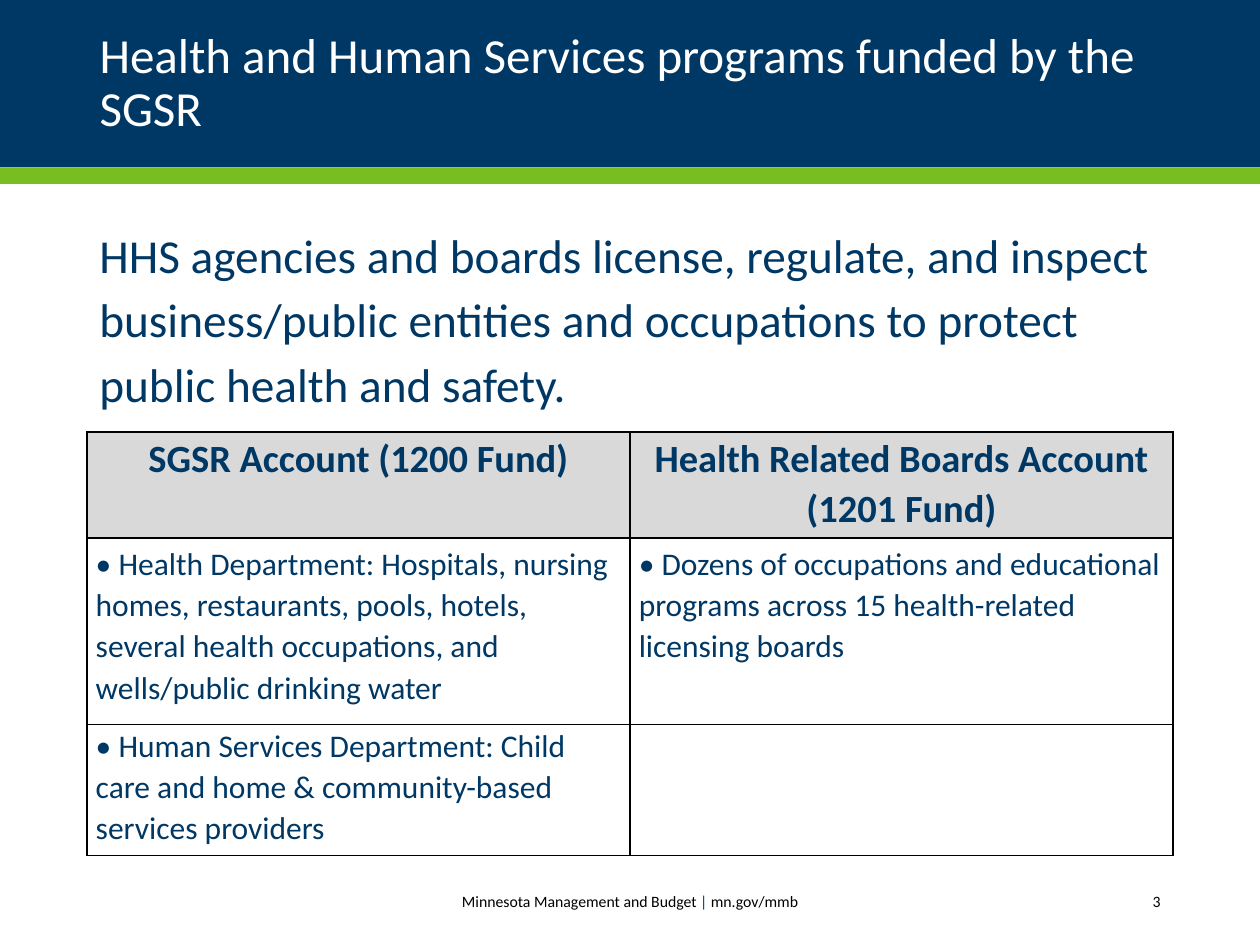
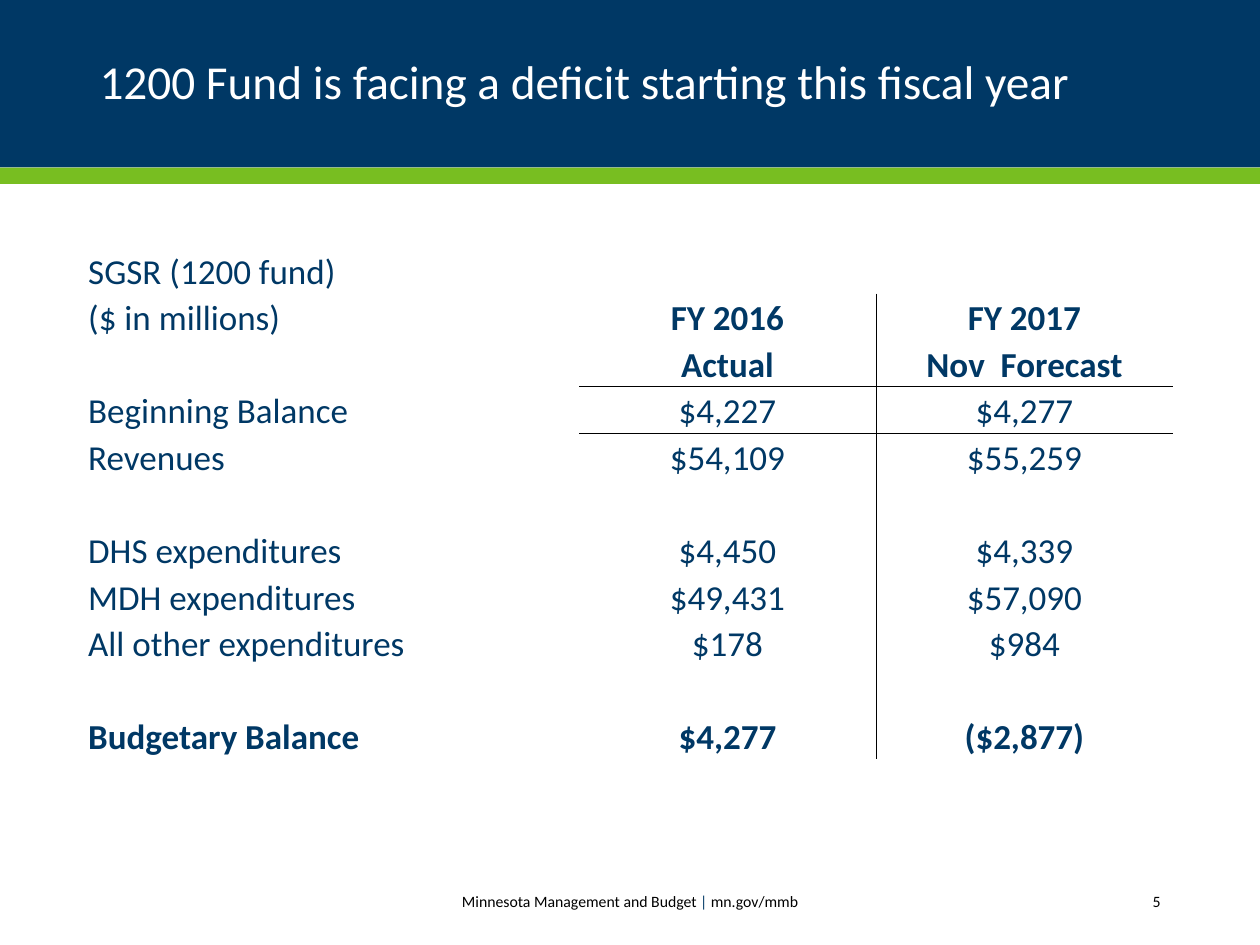
"""Two budget slides on health and human services funds, with shared bands, titles and footers."""
from dataclasses import dataclass, field

from lxml import etree
from pptx import Presentation
from pptx.dml.color import RGBColor
from pptx.enum.shapes import MSO_SHAPE
from pptx.enum.text import MSO_ANCHOR, PP_ALIGN
from pptx.oxml.ns import qn
from pptx.util import Emu, Inches, Pt

LEFT, CENTER, RIGHT = PP_ALIGN.LEFT, PP_ALIGN.CENTER, PP_ALIGN.RIGHT
TOP, MIDDLE, BOTTOM = MSO_ANCHOR.TOP, MSO_ANCHOR.MIDDLE, MSO_ANCHOR.BOTTOM
RECTANGLE = MSO_SHAPE.RECTANGLE

WIDTH, HEIGHT = Inches(10), Inches(7.5)
FONT = "Calibri"
COLOURS = {
    "navy": "003865",
    "green": "78BE21",
    "grey": "D9D9D9",
    "white": "FFFFFF",
    "black": "000000",
}
PLAIN_TABLE = "{2D5ABB26-0587-4C30-8999-92F81FD0307C}"
FOOTER_PARTS = (
    ("Minnesota Management and Budget ", "black"),
    ("|", "navy"),
    (" mn.gov/mmb", "black"),
)


@dataclass(frozen=True)
class Area:
    """A rectangle in percent of the slide's width and height."""

    left: float
    top: float
    width: float
    height: float

    def place(self) -> tuple[Emu, Emu, Emu, Emu]:
        """Return left, top, width and height as lengths."""
        return (
            Emu(round(WIDTH * self.left / 100)),
            Emu(round(HEIGHT * self.top / 100)),
            Emu(round(WIDTH * self.width / 100)),
            Emu(round(HEIGHT * self.height / 100)),
        )


@dataclass(frozen=True)
class Style:
    """The look of a paragraph."""

    size: float
    colour: str = "navy"
    bold: bool = False
    align: PP_ALIGN = LEFT
    spacing: float = 1.0


@dataclass(frozen=True)
class CellLook:
    """The text style, fill, anchor, insets in inches and borders of a cell."""

    style: Style
    fill: str | None = None
    anchor: MSO_ANCHOR = TOP
    insets: tuple[float, float, float, float] = (0.07, 0, 0.07, 0)
    borders: dict[str, float] = field(default_factory=dict)


BANDS = (
    (Area(0, 0, 100, 17.73), "navy"),
    (Area(0, 17.73, 100, 1.73), "green"),
)
TITLE = Area(6.9, 2.27, 86.2, 13.33)
INTRO = Area(6.9, 22.4, 86.2, 63.47)
FOOTER = Area(27.1, 92.67, 45.8, 5.33)
PAGE_NUMBER = Area(81.1, 92.67, 12, 5.33)
ACCOUNTS = Area(6.9, 45.73, 86.2, 44.8)
BALANCES = Area(6.9, 26.13, 86.2, 54.27)

ACCOUNT_ROWS = (
    ("SGSR Account (1200 Fund)", "Health Related Boards Account (1201 Fund)"),
    (
        "• Health Department: Hospitals, nursing homes, restaurants, pools, hotels, "
        "several health occupations, and wells/public drinking water",
        "• Dozens of occupations and educational programs across 15 health-related "
        "licensing boards",
    ),
    (
        "• Human Services Department: Child care and home & community-based "
        "services providers",
        "",
    ),
)
BALANCE_ROWS = (
    ("SGSR (1200 fund)", "", ""),
    ("($ in millions)", "FY 2016", "FY 2017"),
    ("", "Actual", "Nov  Forecast"),
    ("Beginning Balance", "$4,227", "$4,277"),
    ("Revenues", "$54,109", "$55,259"),
    ("", "", ""),
    ("DHS expenditures", "$4,450", "$4,339"),
    ("MDH expenditures", "$49,431", "$57,090"),
    ("All other expenditures", "$178", "$984"),
    ("", "", ""),
    ("Budgetary Balance", "$4,277", "($2,877)"),
)


def rgb(colour: str) -> RGBColor:
    """Look up a named colour."""
    return RGBColor.from_string(COLOURS[colour])


def format_run(run, style: Style, colour: str) -> None:
    """Apply font, size, weight and colour to a run."""
    run.font.name = FONT
    run.font.size = Pt(style.size)
    run.font.bold = style.bold
    run.font.color.rgb = rgb(colour)


def write(frame, text: str, style: Style) -> None:
    """Set the text of a frame and format it."""
    frame.text = text
    for paragraph in frame.paragraphs:
        paragraph.alignment = style.align
        paragraph.line_spacing = style.spacing
        for run in paragraph.runs:
            format_run(run, style, style.colour)


def add_text_area(slide, area: Area, anchor: MSO_ANCHOR):
    """Add a wrapping text area and return its frame."""
    frame = slide.shapes.add_textbox(*area.place()).text_frame
    frame.word_wrap = True
    frame.vertical_anchor = anchor
    return frame


def add_bands(slide) -> None:
    """Draw the header bands behind the title."""
    for depth, (area, colour) in enumerate(BANDS, start=2):
        band = slide.shapes.add_shape(RECTANGLE, *area.place())
        band.shadow.inherit = False
        band.fill.solid()
        band.fill.fore_color.rgb = rgb(colour)
        band.line.fill.background()
        slide.shapes._spTree.insert(depth, band._element)


def add_footer(slide, page: int) -> None:
    """Add the agency line and the page number."""
    style = Style(9, "black", align=CENTER)
    agency_line = add_text_area(slide, FOOTER, MIDDLE).paragraphs[0]
    agency_line.alignment = CENTER
    for text, colour in FOOTER_PARTS:
        run = agency_line.add_run()
        run.text = text
        format_run(run, style, colour)
    number = add_text_area(slide, PAGE_NUMBER, MIDDLE)
    write(number, str(page), Style(9, "black", align=RIGHT))


def add_page(deck, title: str, title_size: float, page: int):
    """Add a slide with the shared bands, title and footer."""
    slide = deck.slides.add_slide(deck.slide_layouts[5])
    heading = slide.shapes.title
    heading.left, heading.top, heading.width, heading.height = TITLE.place()
    heading.text_frame.word_wrap = True
    heading.text_frame.vertical_anchor = MIDDLE
    write(heading.text_frame, title, Style(title_size, "white", spacing=0.9))
    add_bands(slide)
    add_footer(slide, page)
    return slide


def set_borders(cell, borders: dict[str, float]) -> None:
    """Draw black borders, given as side and width in points."""
    properties = cell._tc.get_or_add_tcPr()
    for side in "LRTB":
        if side in borders:
            line = etree.SubElement(
                properties, qn(f"a:ln{side}"), w=str(Pt(borders[side]))
            )
            fill = etree.SubElement(line, qn("a:solidFill"))
            etree.SubElement(fill, qn("a:srgbClr"), val=COLOURS["black"])


def fill_cell(cell, text: str, look: CellLook) -> None:
    """Write and format one cell."""
    write(cell.text_frame, text, look.style)
    cell.vertical_anchor = look.anchor
    cell.margin_left, cell.margin_top, cell.margin_right, cell.margin_bottom = map(
        Inches, look.insets
    )
    set_borders(cell, look.borders)
    if look.fill:
        cell.fill.solid()
        cell.fill.fore_color.rgb = rgb(look.fill)
    else:
        cell.fill.background()


def add_grid(slide, area: Area, rows, column_shares, row_shares, look_at) -> None:
    """Add a table whose cells take their look from row and column."""
    left, top, width, height = area.place()
    table = slide.shapes.add_table(
        len(rows), len(column_shares), left, top, width, height
    ).table
    table.first_row = table.horz_banding = False
    table._tbl.tblPr.find(qn("a:tableStyleId")).text = PLAIN_TABLE
    for column, share in zip(table.columns, column_shares):
        column.width = round(width * share / sum(column_shares))
    for row, share in zip(table.rows, row_shares):
        row.height = round(height * share / sum(row_shares))
    for r, texts in enumerate(rows):
        for c, text in enumerate(texts):
            fill_cell(table.cell(r, c), text, look_at(r, c))


def account_look(row: int, column: int) -> CellLook:
    """Grey bold header over one framed block of two rows."""
    if row == 0:
        header = Style(22, bold=True, align=CENTER, spacing=1.07)
        return CellLook(header, "grey", borders=dict.fromkeys("LRTB", 1))
    edge = "T" if row == 1 else "B"
    top_inset = 0.04 if row == 1 else 0
    return CellLook(
        Style(18, spacing=1.07),
        insets=(0.07, top_inset, 0.07, 0),
        borders=dict.fromkeys("LR" + edge, 1),
    )


def balance_look(row: int, column: int) -> CellLook:
    """Bold year headings and total, with thin rules between the years."""
    is_year = column > 0
    is_bold = row == len(BALANCE_ROWS) - 1 or (is_year and row in (1, 2))
    sides = ""
    if is_year and row > 0:
        sides = "R" if column == 1 else "L"
        sides += {2: "B", 3: "T"}.get(row, "")
    return CellLook(
        Style(20, bold=is_bold, align=CENTER if is_year else LEFT),
        anchor=BOTTOM,
        insets=(0.01, 0.01, 0.01, 0),
        borders=dict.fromkeys(sides, 0.5),
    )


def add_programs_page(deck) -> None:
    """Add the slide on funded programs."""
    slide = add_page(
        deck, "Health and Human Services programs funded by the SGSR", 28, 3
    )
    write(
        add_text_area(slide, INTRO, TOP),
        "HHS agencies and boards license, regulate, and inspect business/public "
        "entities and occupations to protect public health and safety.",
        Style(27, spacing=1.14),
    )
    add_grid(slide, ACCOUNTS, ACCOUNT_ROWS, (1, 1), (0.84, 1.48, 1.04), account_look)


def add_deficit_page(deck) -> None:
    """Add the slide on the fund's deficit."""
    slide = add_page(
        deck, "1200 Fund is facing a deficit starting this fiscal year", 27, 5
    )
    even_rows = (1,) * len(BALANCE_ROWS)
    add_grid(
        slide, BALANCES, BALANCE_ROWS, (3.91, 2.36, 2.36), even_rows, balance_look
    )


def main() -> None:
    """Build and save the deck."""
    deck = Presentation()
    deck.slide_width, deck.slide_height = WIDTH, HEIGHT
    add_programs_page(deck)
    add_deficit_page(deck)
    deck.save("out.pptx")


if __name__ == "__main__":
    main()
